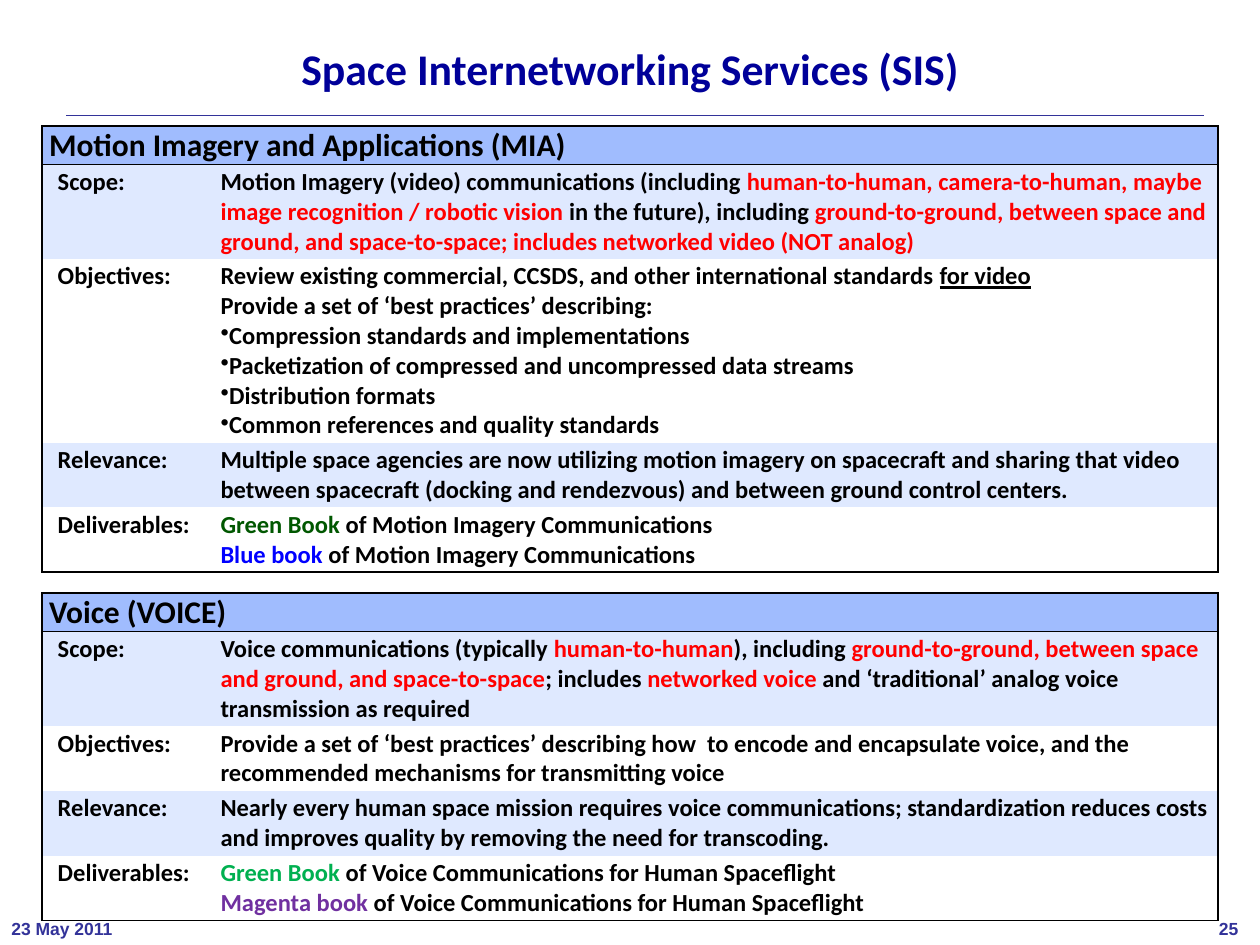
from dataclasses import dataclass
from pptx import Presentation
from pptx import util as u
from pptx.dml import color
from pptx.enum import shapes, text
from pptx.oxml import ns
from lxml import etree


@dataclass(frozen=True)
class Theme:
    face: str = "Calibri"
    foot: str = "Arial"
    title: str = "000099"
    mark: str = "333399"
    ink: str = "000000"
    head: str = "A0BCFE"
    band: str = "DFE9FF"
    red: str = "FF0000"
    big: int = 25
    mid: int = 18
    body: int = 14
    small: int = 10


T = Theme()


def rgb(code):
    return color.RGBColor.from_string(code)


def sub(node, tag, **attrs):
    return etree.SubElement(node, ns.qn(tag), **attrs)


class Deck:
    def __init__(self, theme):
        self.theme = theme
        self.file = Presentation()
        self.file.slide_width, self.file.slide_height = u.Pt(720), u.Pt(540)
        self.slide = self.file.slides.add_slide(self.file.slide_layouts[5])

    def run(self, para, words, size, tint=None, under=False, face=None):
        run = para.add_run()
        run.text = words
        font = run.font
        font.name, font.size, font.bold = face or self.theme.face, u.Pt(size), True
        font.color.rgb = rgb(tint or self.theme.ink)
        if under:
            font.underline = True

    def title(self, words, left, top, width, height):
        box = self.slide.shapes.title
        box.left, box.top, box.width, box.height = map(u.Pt, (left, top, width, height))
        frame = box.text_frame
        frame.auto_size = text.MSO_AUTO_SIZE.NONE
        frame.vertical_anchor = text.MSO_ANCHOR.MIDDLE
        para = frame.paragraphs[0]
        para.alignment, para.line_spacing = text.PP_ALIGN.CENTER, 0.9
        self.run(para, words, self.theme.big, self.theme.title)

    def rule(self, left, right, top):
        line = self.slide.shapes.add_connector(
            shapes.MSO_CONNECTOR.STRAIGHT, *map(u.Pt, (left, top, right, top)))
        line.line.color.rgb = rgb(self.theme.mark)
        line.line.width = u.Pt(0.13)
        sub(line.element.spPr, "a:effectLst")

    def note(self, words, left, top, width, height):
        box = self.slide.shapes.add_textbox(*map(u.Pt, (left, top, width, height)))
        frame = box.text_frame
        frame.word_wrap = False
        frame.margin_left = frame.margin_right = u.Pt(6.5)
        frame.margin_top = frame.margin_bottom = u.Pt(3)
        self.run(frame.paragraphs[0], words, self.theme.small,
                 self.theme.mark, face=self.theme.foot)

    def grid(self, left, top, cols, rows):
        shape = self.slide.shapes.add_table(
            len(rows), len(cols), *map(u.Pt, (left, top, sum(cols), sum(rows))))
        table = shape.table
        table.first_row = table.horz_banding = False
        for col, width in zip(table.columns, cols):
            col.width = u.Pt(width)
        for row, height in zip(table.rows, rows):
            row.height = u.Pt(height)
        return table

    def edge(self, cell, sides):
        props = cell._tc.get_or_add_tcPr()
        for side in "LRTB":
            line = sub(props, f"a:ln{side}", w=str(u.Pt(1)))
            if side in sides:
                sub(sub(line, "a:solidFill"), "a:srgbClr", val=self.theme.ink)
            else:
                sub(line, "a:noFill")

    def cell(self, cell, paras, sides, fill=None, size=T.body, inset=0, pad=1.5):
        cell.margin_left, cell.margin_right = u.Pt(inset), 0
        cell.margin_top = cell.margin_bottom = u.Pt(pad)
        self.edge(cell, sides)
        if fill:
            cell.fill.solid()
            cell.fill.fore_color.rgb = rgb(fill)
        else:
            cell.fill.background()
        frame = cell.text_frame
        for i, runs in enumerate(paras):
            para = frame.add_paragraph() if i else frame.paragraphs[0]
            for words, *look in runs:
                if words == "•":
                    props = para._p.get_or_add_pPr()
                    props.set("marL", "0")
                    props.set("indent", "0")
                    sub(props, "a:buChar", char=words)
                elif words == "\n":
                    para.add_line_break()
                else:
                    self.run(para, words, size, *look)

    def head(self, table, row, words):
        first, last = table.cell(row, 0), table.cell(row, 1)
        first.merge(last)
        self.cell(first, [[(words,)]], "LRTB", self.theme.head, self.theme.mid, 4, 0)
        self.edge(last, "LRTB")

    def gap(self, table, row):
        first, last = table.cell(row, 0), table.cell(row, 1)
        first.merge(last)
        self.cell(first, [], "TB", pad=0)
        self.edge(last, "TB")
        sub(first.text_frame.paragraphs[0]._p, "a:endParaRPr", sz="800")

    def group(self, table, row, name, parts):
        self.head(table, row, name)
        for i, (label, paras) in enumerate(zip(LABELS, parts)):
            fill = None if i % 2 else self.theme.band
            ends = ("T" if i == 0 else "") + ("B" if i == len(LABELS) - 1 else "")
            at = row + 1 + i
            self.cell(table.cell(at, 0), [[(label,)]], "L" + ends, fill, inset=9)
            self.cell(table.cell(at, 1), paras, "R" + ends, fill)


LABELS = ["Scope:", "Objectives:", "Relevance:", "Deliverables:"]
POINTS = ["Compression standards and implementations",
          "Packetization of compressed and uncompressed data streams",
          "Distribution formats",
          "Common references and quality standards"]

MIA = [
    [[("Motion Imagery (video) communications (including ",),
      ("human-to-human, camera-to-human, maybe image recognition / robotic vision", T.red),
      (" in the future), including ",),
      ("ground-to-ground, between space and ground, and space-to-space; "
       "includes networked video (NOT analog)", T.red)]],
    [[("Review existing commercial, CCSDS, and other international standards ",),
      ("for video", T.ink, True)],
     [("Provide a set of ‘best practices’ describing:",)],
     *[[("•",), (point,)] for point in POINTS]],
    [[("Multiple space agencies are now utilizing motion imagery on spacecraft and sharing "
       "that video between spacecraft (docking and rendezvous) and between ground control "
       "centers.",)]],
    [[(book, tint), ("of Motion Imagery Communications",)]
     for book, tint in (("Green Book ", "005700"), ("Blue book ", "0000FF"))],
]

VOICE = [
    [[("Voice communications (typically ",), ("human-to-human", T.red),
      ("), including ",),
      ("ground-to-ground, between space and ground, and space-to-space", T.red),
      ("; includes ",), ("networked voice ", T.red),
      ("and ‘traditional’ analog voice transmission as required",)]],
    [[("Provide a set of ‘best practices’ describing how  to encode and encapsulate voice, "
       "and the recommended mechanisms for transmitting voice",)]],
    [[("Nearly every human space mission requires voice communications; standardization "
       "reduces costs and improves quality by removing the need for transcoding.",)]],
    [[("Green Book ", "00B050"), ("of Voice Communications for Human Spaceflight ",),
      ("\n",), ("Magenta book ", "7030A0"),
      ("of Voice Communications for Human Spaceflight",)]],
]


def main():
    deck = Deck(T)
    deck.rule(38, 688, 66)
    deck.note("25", 690, 521.5, 25, 18.5)
    deck.note("23 May 2011", 0, 521.5, 71, 18.5)
    deck.title("Space Internetworking Services (SIS)", 36, 21.6, 648, 38)
    table = deck.grid(24, 72, [102, 570], [22, 54, 105, 37, 37, 12, 22, 54, 37, 37, 37])
    deck.group(table, 0, "Motion Imagery and Applications (MIA)", MIA)
    deck.gap(table, 5)
    deck.group(table, 6, "Voice (VOICE)", VOICE)
    deck.file.save("out.pptx")


if __name__ == "__main__":
    main()
